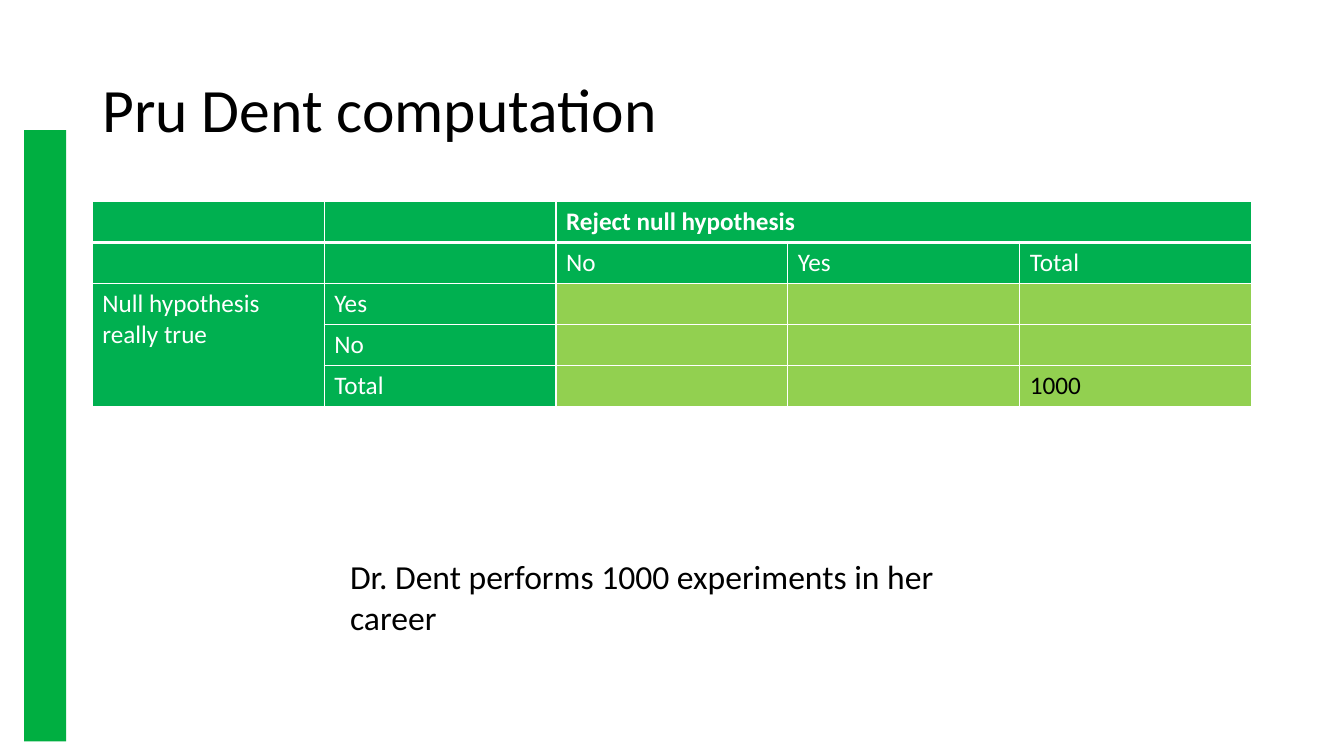
from pptx import Presentation
from pptx.dml.color import RGBColor
from pptx.enum.shapes import MSO_SHAPE
from pptx.enum.text import MSO_ANCHOR, PP_ALIGN
from pptx.oxml import parse_xml
from pptx.oxml.ns import nsdecls
from pptx.util import Pt

PX = 9525  # 96 px to the inch
FONT = "Calibri"
COLORS = {"bar": "00AF41", "header": "00B050", "body": "92D050",
          "white": "FFFFFF", "black": "000000"}
HEADER_ROWS = HEADER_COLS = 2
CELLS = [
    ["", "", "Reject null hypothesis", "", ""],
    ["", "", "No", "Yes", "Total"],
    ["Null hypothesis really true", "Yes", "", "", ""],
    ["", "No", "", "", ""],
    ["", "Total", "", "", "1000"],
]


def px(*lengths):
    return [n * PX for n in lengths]


def rgb(name):
    return RGBColor.from_string(COLORS[name])


def set_font(p, size, color, bold=False):
    p.font.name, p.font.size, p.font.bold = FONT, Pt(size), bold
    p.font.color.rgb = rgb(color)


def add_rect(slide, box, color):
    sp = slide.shapes.add_shape(MSO_SHAPE.RECTANGLE, *px(*box))
    sp.shadow.inherit = False
    sp.fill.solid()
    sp.fill.fore_color.rgb = rgb(color)
    sp.line.fill.background()
    return sp


def add_title(slide, box, text):
    title = slide.shapes.title
    title.left, title.top, title.width, title.height = px(*box)
    tf = title.text_frame
    tf.text = text
    tf.vertical_anchor = MSO_ANCHOR.MIDDLE
    p = tf.paragraphs[0]
    p.alignment, p.line_spacing = PP_ALIGN.LEFT, 0.9
    set_font(p, 44, "black")


def set_borders(cell, bottom):
    """Draw white 1 pt borders, with the bottom one of the given width."""
    tc_pr = cell._tc.get_or_add_tcPr()
    for side, width in zip("LRTB", (1, 1, 1, bottom)):
        tc_pr.append(parse_xml(
            f'<a:ln{side} {nsdecls("a")} w="{Pt(width)}"><a:solidFill>'
            f'<a:srgbClr val="{COLORS["white"]}"/></a:solidFill></a:ln{side}>'))


def add_hypothesis_table(slide, box):
    n_rows, n_cols = len(CELLS), len(CELLS[0])
    table = slide.shapes.add_table(n_rows, n_cols, *px(*box)).table
    table.horz_banding = False
    for r, row in enumerate(CELLS):
        for c, text in enumerate(row):
            cell = table.cell(r, c)
            is_header = r < HEADER_ROWS or c < HEADER_COLS
            set_borders(cell, 3 if r == 0 else 1)
            cell.fill.solid()
            cell.fill.fore_color.rgb = rgb("header" if is_header else "body")
            cell.text = text
            set_font(cell.text_frame.paragraphs[0], 18,
                     "white" if is_header else "black", bold=r == 0)
    table.cell(0, HEADER_COLS).merge(table.cell(0, n_cols - 1))
    table.cell(HEADER_ROWS, 0).merge(table.cell(n_rows - 1, 0))


def add_note(slide, box, text):
    tf = add_rect(slide, box, "white").text_frame
    tf.word_wrap = True
    tf.vertical_anchor = MSO_ANCHOR.TOP
    tf.text = text
    p = tf.paragraphs[0]
    p.alignment = PP_ALIGN.LEFT
    set_font(p, 24, "black")


def main():
    prs = Presentation()
    prs.slide_width, prs.slide_height = px(1280, 720)
    slide = prs.slides.add_slide(prs.slide_layouts[5])
    add_rect(slide, (23, 124, 40, 582), "bar")
    add_title(slide, (88, 38, 1104, 139), "Pru Dent computation")
    add_hypothesis_table(slide, (88, 192, 1104, 195))
    add_note(slide, (324, 525, 602, 87),
             "Dr. Dent performs 1000 experiments in her career")
    prs.save("out.pptx")


if __name__ == "__main__":
    main()
